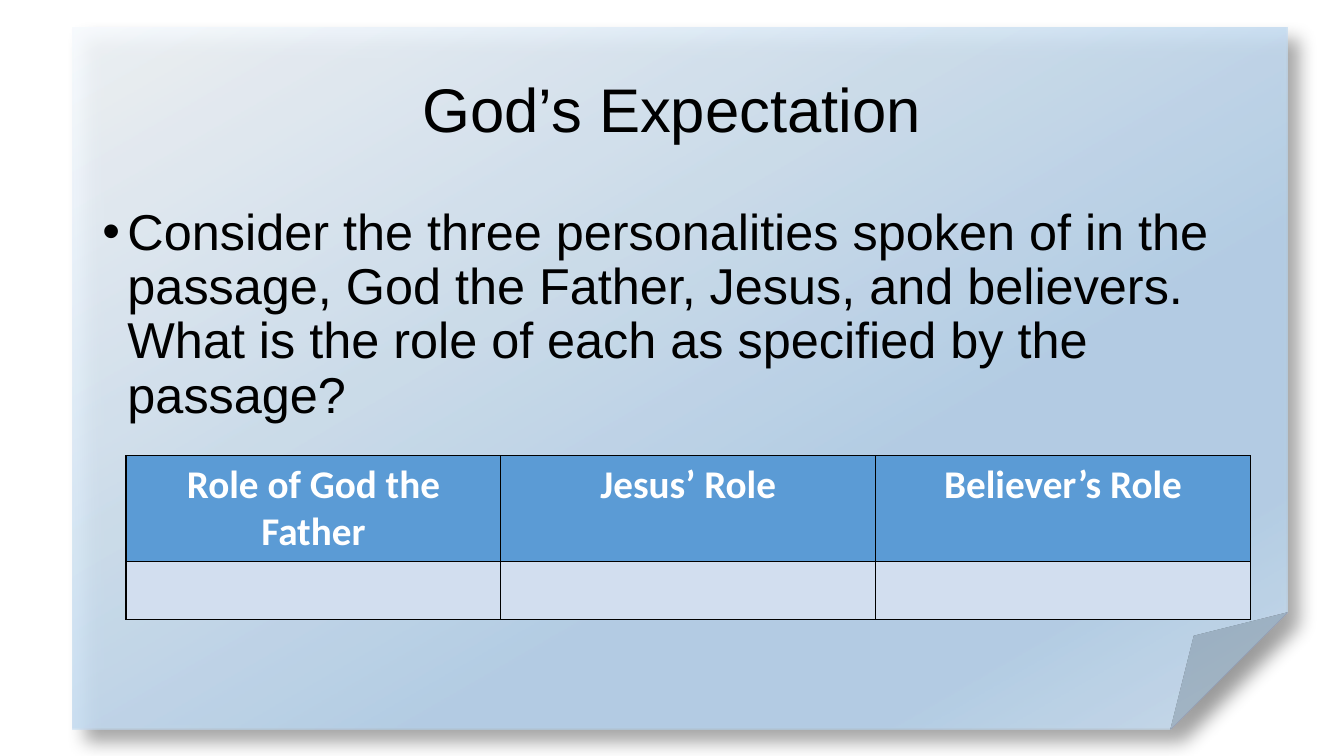
import pptx
import pptx.dml.color
import pptx.enum.shapes
import pptx.enum.text
import pptx.oxml
import pptx.oxml.ns
import pptx.util
from dataclasses import dataclass

PX = 9525  # EMU in one px, 96 px to the inch
ALIGN = pptx.enum.text.PP_ALIGN
ANCHOR = pptx.enum.text.MSO_ANCHOR
NAMESPACE = pptx.oxml.ns.nsdecls("a")


@dataclass(frozen=True)
class Theme:
    text: str = "000000"
    header_text: str = "FFFFFF"
    header_fill: str = "5B9BD5"
    row_fill: str = "D2DEEF"
    border: str = "000000"
    shadow: str = "000000"
    paper: tuple = ((0, "F7FAFD"), (64, "B5D2EC"), (83, "B5D2EC"), (100, "CEE1F2"))
    paper_opacity: int = 87
    text_font: str = "Arial"
    table_font: str = "Calibri"
    title_size: int = 44
    body_size: int = 36
    table_size: int = 28


THEME = Theme()


def px(*lengths):
    return [pptx.util.Emu(length * PX) for length in lengths]


def rgb(colour):
    return pptx.dml.color.RGBColor.from_string(colour)


def set_font(paragraph, name, size, colour, bold=False):
    font = paragraph.font
    font.name = name
    font.size = pptx.util.Pt(size)
    font.bold = bold
    font.color.rgb = rgb(colour)


def add_paper(slide, left, top, width, height):
    """Folded sheet with a translucent gradient and a soft shadow."""
    shape = slide.shapes.add_shape(
        pptx.enum.shapes.MSO_SHAPE.FOLDED_CORNER, *px(left, top, width, height))
    shape.line.fill.background()
    shape.shadow.inherit = False
    stops = "".join(
        f'<a:gs pos="{position * 1000}"><a:srgbClr val="{colour}">'
        f'<a:alpha val="{THEME.paper_opacity * 1000}"/></a:srgbClr></a:gs>'
        for position, colour in THEME.paper)
    gradient = pptx.oxml.parse_xml(
        f'<a:gradFill {NAMESPACE} rotWithShape="1"><a:gsLst>{stops}</a:gsLst>'
        '<a:lin ang="3600000" scaled="0"/></a:gradFill>')
    properties = shape.element.spPr
    properties.find(pptx.oxml.ns.qn("a:prstGeom")).addnext(gradient)
    effects = properties.find(pptx.oxml.ns.qn("a:effectLst"))
    effects.append(pptx.oxml.parse_xml(
        f'<a:outerShdw {NAMESPACE} blurRad="165100" dist="165100" dir="2700000" '
        f'algn="tl" rotWithShape="0"><a:srgbClr val="{THEME.shadow}">'
        '<a:alpha val="40000"/></a:srgbClr></a:outerShdw>'))


def add_text(slide, box, text, size, align, anchor, bullet=False):
    frame = slide.shapes.add_textbox(*px(*box)).text_frame
    frame.word_wrap = True
    frame.vertical_anchor = anchor
    paragraph = frame.paragraphs[0]
    paragraph.text = text
    paragraph.alignment = align
    paragraph.line_spacing = 0.9
    if bullet:
        properties = paragraph._p.get_or_add_pPr()
        properties.set("marL", str(24 * PX))
        properties.set("indent", str(-24 * PX))
        properties.append(pptx.oxml.parse_xml(f'<a:buFont {NAMESPACE} typeface="Arial"/>'))
        properties.append(pptx.oxml.parse_xml(f'<a:buChar {NAMESPACE} char="•"/>'))
    set_font(paragraph, THEME.text_font, size, THEME.text)


def add_borders(cell):
    properties = cell._tc.get_or_add_tcPr()
    for index, side in enumerate(("lnL", "lnR", "lnT", "lnB")):
        properties.insert(index, pptx.oxml.parse_xml(
            f'<a:{side} {NAMESPACE} w="12700"><a:solidFill>'
            f'<a:srgbClr val="{THEME.border}"/></a:solidFill></a:{side}>'))


def add_role_table(slide, left, top, column_width, row_heights, headings):
    columns = len(headings)
    table = slide.shapes.add_table(
        len(row_heights), columns,
        *px(left, top, column_width * columns, sum(row_heights))).table
    for column in table.columns:
        column.width = px(column_width)[0]
    for row, height in zip(table.rows, row_heights):
        row.height = px(height)[0]
    for heading, cell in zip(headings, table.rows[0].cells):
        cell.text = heading
    for row, fill in zip(table.rows, (THEME.header_fill, THEME.row_fill)):
        for cell in row.cells:
            cell.fill.solid()
            cell.fill.fore_color.rgb = rgb(fill)
            add_borders(cell)
            paragraph = cell.text_frame.paragraphs[0]
            paragraph.alignment = ALIGN.CENTER
            set_font(paragraph, THEME.table_font, THEME.table_size,
                     THEME.header_text, bold=True)


def main():
    presentation = pptx.Presentation()
    presentation.slide_width, presentation.slide_height = px(1280, 720)
    slide = presentation.slides.add_slide(presentation.slide_layouts[6])

    # Background sheet
    add_paper(slide, 69, 26, 1157, 669)

    # Title and question
    add_text(slide, (88, 38, 1104, 139), "God’s Expectation",
             THEME.title_size, ALIGN.CENTER, ANCHOR.MIDDLE)
    add_text(slide, (88, 192, 1104, 457),
             "Consider the three personalities spoken of in the passage, "
             "God the Father, Jesus, and believers.  What is the role of each "
             "as specified by the passage?",
             THEME.body_size, ALIGN.LEFT, ANCHOR.TOP, bullet=True)

    # Roles to fill in
    add_role_table(slide, 120, 434, 357, (101, 55),
                   ("Role of God the Father", "Jesus’ Role", "Believer’s Role"))

    presentation.save("out.pptx")


if __name__ == "__main__":
    main()
